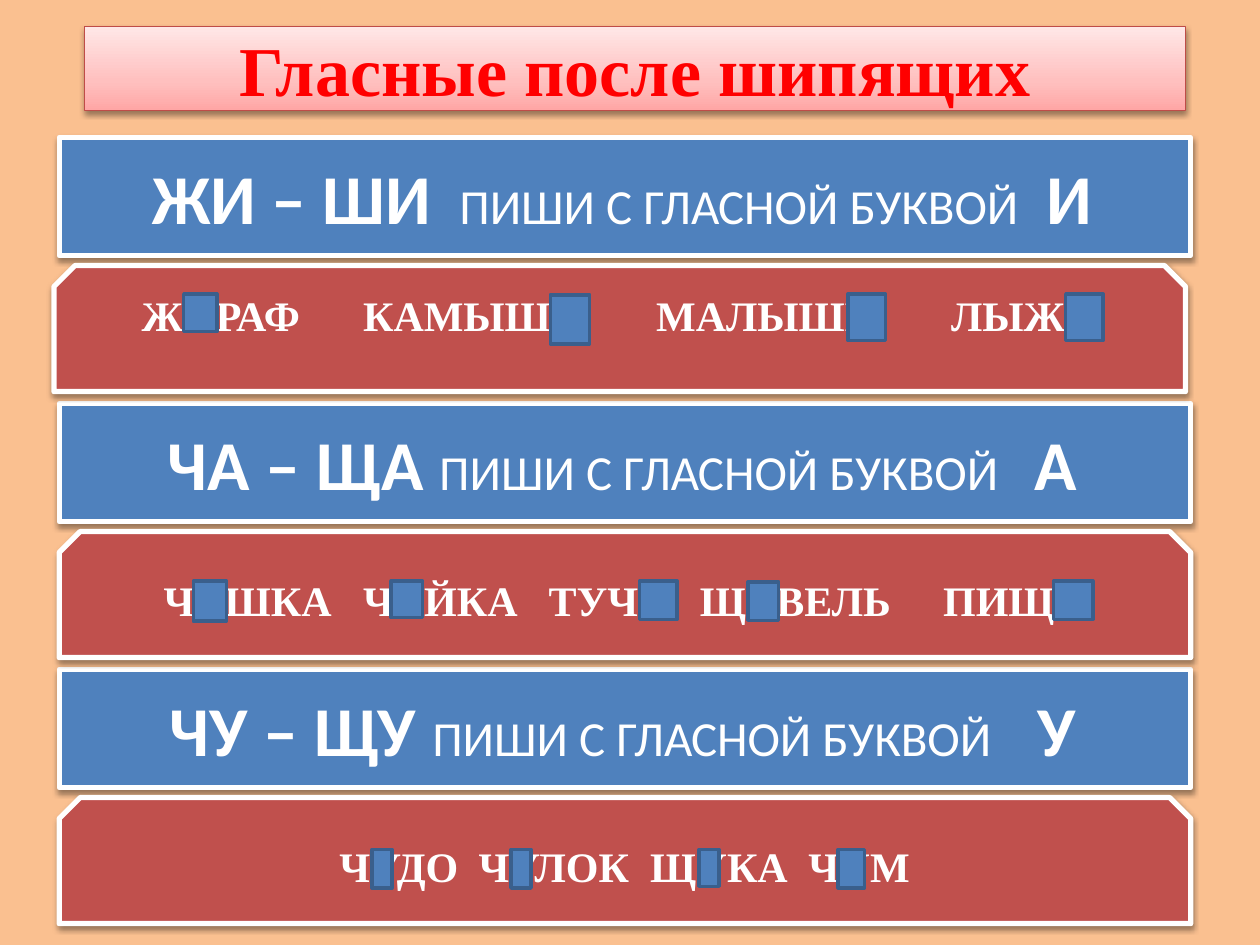
"""Build a slide on spelling vowels after sibilant consonants."""
from copy import deepcopy

from lxml import etree
from pptx import Presentation
from pptx import util as u
from pptx.dml.color import RGBColor
from pptx.enum import shapes, text
from pptx.oxml.ns import qn

PEACH = RGBColor(0xFA, 0xC0, 0x90)
BLUE = RGBColor(0x4F, 0x81, 0xBD)
NAVY = RGBColor(0x3A, 0x5F, 0x8C)
BRICK = RGBColor(0xC0, 0x50, 0x4D)
TITLE_EDGE = RGBColor(0xBF, 0x4C, 0x48)
RED = RGBColor(0xFF, 0, 0)
WHITE = RGBColor(0xFF, 0xFF, 0xFF)
TITLE_STOPS = (
    (0, RGBColor(0xFF, 0xA6, 0xA5)),
    (0.35, RGBColor(0xFF, 0xC0, 0xBF)),
    (1, RGBColor(0xFF, 0xE7, 0xE7)),
)
BAND_LEFT, BAND_WIDTH = 33.8, 646.6
RULE_TOP, RULE_HEIGHT = 78.5, 67.7
WORDS_TOP, WORDS_HEIGHT = 151.8, 72
PITCH = 152
SNIP_INSET = 6
INSTRUCTION = "ПИШИ С ГЛАСНОЙ БУКВОЙ"

RULES = (
    ("ЖИ – ШИ", "И", (87, 262.5, 598)),
    ("ЧА – ЩА", "А", (96, 251, 591)),
    ("ЧУ – ЩУ", "У", (97, 247, 593)),
)
WORD_ROWS = (
    (30.8, 25.6, (("ЖИРАФ", 81), ("КАМЫШИ", 207.5), ("МАЛЫШИ", 375), ("ЛЫЖИ", 543.5))),
    (33.8, 3.6, (("ЧАШКА", 93.5), ("ЧАЙКА", 207.5), ("ТУЧА", 313.5),
                 ("ЩАВЕЛЬ", 400), ("ПИЩА", 539))),
    (33.8, 3.6, (("ЧУДО", 194), ("ЧУЛОК", 273.5), ("ЩУКА", 371.5), ("ЧУМ", 462))),
)
HIDDEN_VOWELS = (
    (105, 168, 19, 21.5), (314.5, 168.5, 22.5, 28),
    (484.5, 168, 21.5, 26.5), (609, 168, 21.5, 26.5),
    (110.5, 332, 19, 23), (223.5, 332, 18, 21), (365.5, 332, 21.5, 22),
    (427.5, 332.5, 17.5, 22), (602, 332, 22.5, 22),
    (212.5, 485.5, 11.5, 22), (292, 485.5, 11.5, 22),
    (399.5, 485.5, 11.5, 21), (479, 485.5, 15, 22),
)


def apply_format(target, values):
    """Set each named attribute of the target."""
    for name, value in values.items():
        setattr(target, name, value)


def add_soft_shadow(shape):
    """Give the shape a soft shadow falling downwards."""
    shape.shadow.inherit = False
    effects = shape._element.spPr.find(qn("a:effectLst"))
    shadow = etree.SubElement(effects, qn("a:outerShdw"), blurRad=str(u.Pt(3.1)),
                              dist=str(u.Pt(1.6)), dir="5400000", rotWithShape="0")
    tint = etree.SubElement(shadow, qn("a:srgbClr"), val="000000")
    etree.SubElement(tint, qn("a:alpha"), val="38000")


def add_box(slide, kind, bounds, fill, edge, edge_width):
    """Add a filled and outlined shape without a shadow."""
    box = slide.shapes.add_shape(kind, *map(u.Pt, bounds))
    box.shadow.inherit = False
    box.fill.solid()
    box.fill.fore_color.rgb = fill
    box.line.color.rgb = edge
    box.line.width = u.Pt(edge_width)
    return box


def write_columns(band, origin, starts, runs, bottom=3.6):
    """Write one line whose tabbed parts begin at the given slide positions."""
    frame = band.text_frame
    apply_format(frame, {
        "word_wrap": True,
        "vertical_anchor": text.MSO_ANCHOR.MIDDLE,
        "margin_left": u.Pt(starts[0] - origin),
        "margin_right": 0,
        "margin_bottom": u.Pt(bottom),
    })
    line = frame.paragraphs[0]
    line.alignment = text.PP_ALIGN.LEFT
    tabs = etree.SubElement(line._p.get_or_add_pPr(), qn("a:tabLst"))
    for start in starts[1:]:
        etree.SubElement(tabs, qn("a:tab"), pos=str(u.Pt(start - starts[0])), algn="l")
    for wording, font, size, bold in runs:
        run = line.add_run()
        run.text = wording
        apply_format(run.font, {"name": font, "size": u.Pt(size), "bold": bold})
        run.font.color.rgb = WHITE


def add_title(slide):
    """Place and format the heading on its pink gradient."""
    heading = slide.shapes.title
    apply_format(heading, {"left": u.Pt(48.2), "top": u.Pt(15.1),
                           "width": u.Pt(629.3), "height": u.Pt(48.2)})
    heading.fill.gradient()
    heading.fill.gradient_angle = 90
    first = heading._element.spPr.find(".//" + qn("a:gs"))
    first.addnext(deepcopy(first))
    for stop, (position, color) in zip(heading.fill.gradient_stops, TITLE_STOPS):
        stop.position = position
        stop.color.rgb = color
    heading.line.color.rgb = TITLE_EDGE
    heading.line.width = u.Pt(0.75)
    add_soft_shadow(heading)
    frame = heading.text_frame
    frame.text = "Гласные после шипящих"
    apply_format(frame, {"vertical_anchor": text.MSO_ANCHOR.MIDDLE,
                         "auto_size": text.MSO_AUTO_SIZE.NONE})
    line = frame.paragraphs[0]
    line.alignment = text.PP_ALIGN.CENTER
    font = line.runs[0].font
    apply_format(font, {"name": "Times New Roman", "size": u.Pt(40), "bold": True})
    font.color.rgb = RED


def add_rule(slide, row, syllables, vowel, starts):
    """Add a blue band that states one spelling rule."""
    bounds = (BAND_LEFT, RULE_TOP + row * PITCH, BAND_WIDTH, RULE_HEIGHT)
    band = add_box(slide, shapes.MSO_SHAPE.RECTANGLE, bounds, BLUE, WHITE, 3)
    add_soft_shadow(band)
    write_columns(band, BAND_LEFT, starts, (
        (syllables, "Calibri", 40, True),
        (f"\t{INSTRUCTION}\t", "Calibri", 28, False),
        (vowel, "Calibri", 40, True),
    ))


def add_words(slide, row, left, bottom, examples):
    """Add a red band of example words."""
    bounds = (left, WORDS_TOP + row * PITCH, BAND_WIDTH, WORDS_HEIGHT)
    band = add_box(slide, shapes.MSO_SHAPE.SNIP_2_SAME_RECTANGLE, bounds, BRICK, WHITE, 3)
    add_soft_shadow(band)
    words, starts = zip(*examples)
    write_columns(band, left + SNIP_INSET, starts,
                  (("\t".join(words), "Times New Roman", 24, True),), bottom)


def main():
    """Assemble and save the slide."""
    deck = Presentation()
    apply_format(deck, {"slide_width": u.Pt(720), "slide_height": u.Pt(540)})
    slide = deck.slides.add_slide(deck.slide_layouts[5])
    slide.background.fill.solid()
    slide.background.fill.fore_color.rgb = PEACH
    add_title(slide)
    for row, rule in enumerate(RULES):
        add_rule(slide, row, *rule)
    for row, words in enumerate(WORD_ROWS):
        add_words(slide, row, *words)
    for bounds in HIDDEN_VOWELS:
        add_box(slide, shapes.MSO_SHAPE.RECTANGLE, bounds, BLUE, NAVY, 2)
    deck.save("out.pptx")


if __name__ == "__main__":
    main()
